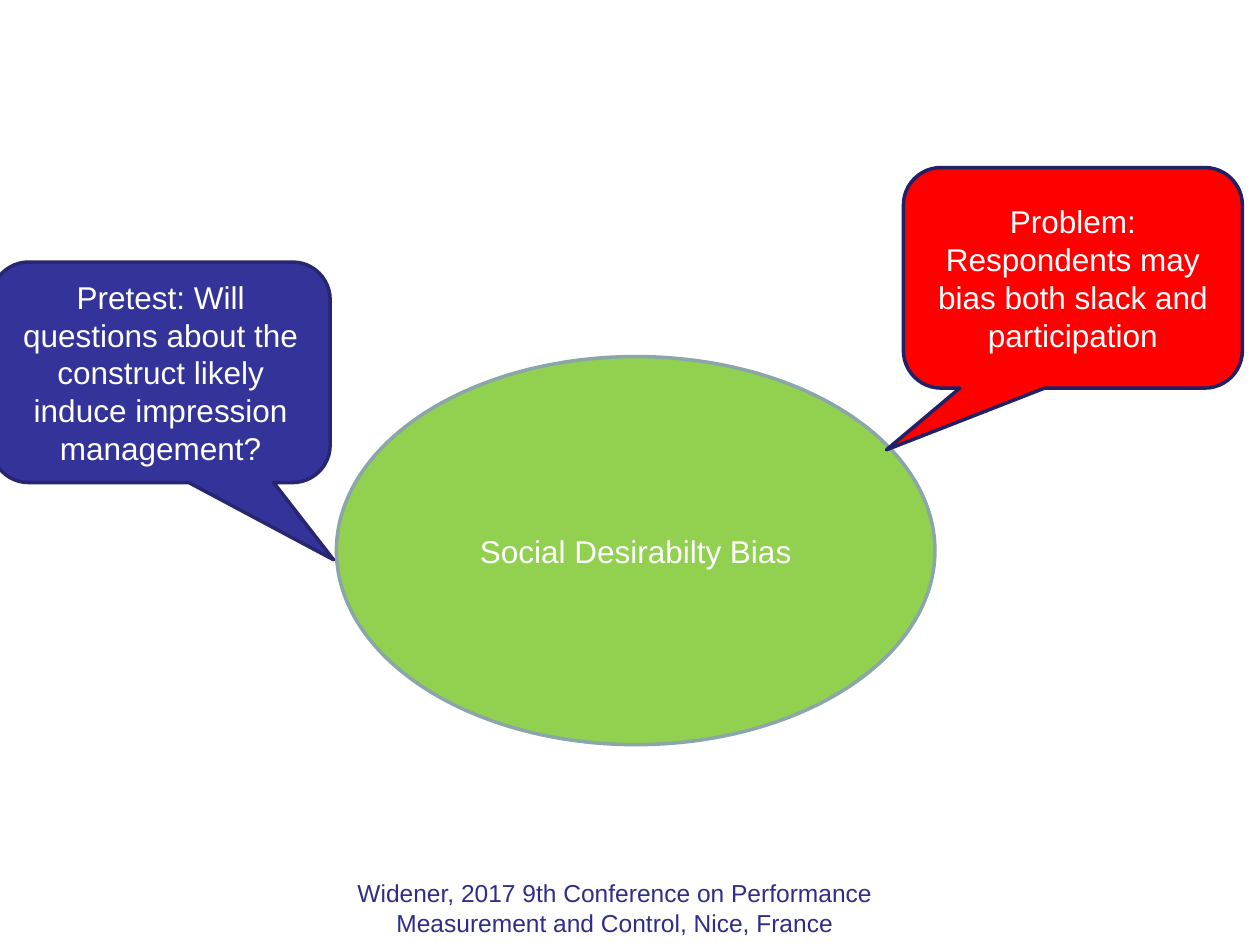
"""Build a slide on social desirability bias with two callouts around an ellipse."""
import pptx
import pptx.dml.color
import pptx.enum.shapes
import pptx.enum.text
import pptx.util

RGBColor = pptx.dml.color.RGBColor
WHITE = RGBColor(0xFF, 0xFF, 0xFF)
GREEN = RGBColor(0x92, 0xD0, 0x50)
GREY = RGBColor(0x8A, 0xA6, 0xA8)
RED = RGBColor(0xFF, 0x00, 0x00)
NAVY = RGBColor(0x21, 0x21, 0x66)
INDIGO = RGBColor(0x33, 0x33, 0x99)
DARK_INDIGO = RGBColor(0x26, 0x26, 0x71)
FOOTER_BLUE = RGBColor(0x2D, 0x2D, 0x8A)

ELLIPSE = pptx.enum.shapes.MSO_SHAPE.OVAL
CALLOUT = pptx.enum.shapes.MSO_SHAPE.ROUNDED_RECTANGULAR_CALLOUT
CALLOUT_SIZE = (2.69, 1.75)


def place(left, top, width, height):
    return [pptx.util.Inches(length) for length in (left, top, width, height)]


def write(box, text, size, color, anchor):
    frame = box.text_frame
    frame.word_wrap = True
    frame.vertical_anchor = anchor
    para = frame.paragraphs[0]
    para.alignment = pptx.enum.text.PP_ALIGN.CENTER
    span = para.add_run()
    span.text = text
    for name, value in {"name": "Arial", "size": pptx.util.Pt(size)}.items():
        setattr(span.font, name, value)
    span.font.color.rgb = color


deck = pptx.Presentation()
deck.slide_width = pptx.util.Inches(10)
deck.slide_height = pptx.util.Inches(7.5)
page = deck.slides.add_slide(deck.slide_layouts[6])

footer = page.shapes.add_textbox(*place(2.42, 6.92, 4.92, 0.35))
write(footer, "Widener, 2017 9th Conference on Performance Measurement and Control, Nice, France",
      14, FOOTER_BLUE, pptx.enum.text.MSO_ANCHOR.TOP)

bubbles = [
    (ELLIPSE, (2.67, 2.83, 4.75, 3.08), (), GREEN, GREY, "Social Desirabilty Bias"),
    (CALLOUT, (7.17, 1.33, *CALLOUT_SIZE), (-0.55, 0.78, 0.17), RED, NAVY,
     "Problem: Respondents may bias both slack and participation"),
    (CALLOUT, (-0.07, 2.08, *CALLOUT_SIZE), (0.51, 0.85, 0.17), INDIGO, DARK_INDIGO,
     "Pretest: Will questions about the construct likely induce impression management?"),
]
for kind, bounds, adjustments, fill, outline, text in bubbles:
    bubble = page.shapes.add_shape(kind, *place(*bounds))
    bubble.shadow.inherit = False
    for index, value in enumerate(adjustments):
        bubble.adjustments[index] = value
    bubble.fill.solid()
    bubble.fill.fore_color.rgb = fill
    bubble.line.color.rgb = outline
    bubble.line.width = pptx.util.Pt(2)
    write(bubble, text, 18, WHITE, pptx.enum.text.MSO_ANCHOR.MIDDLE)

deck.save("out.pptx")
